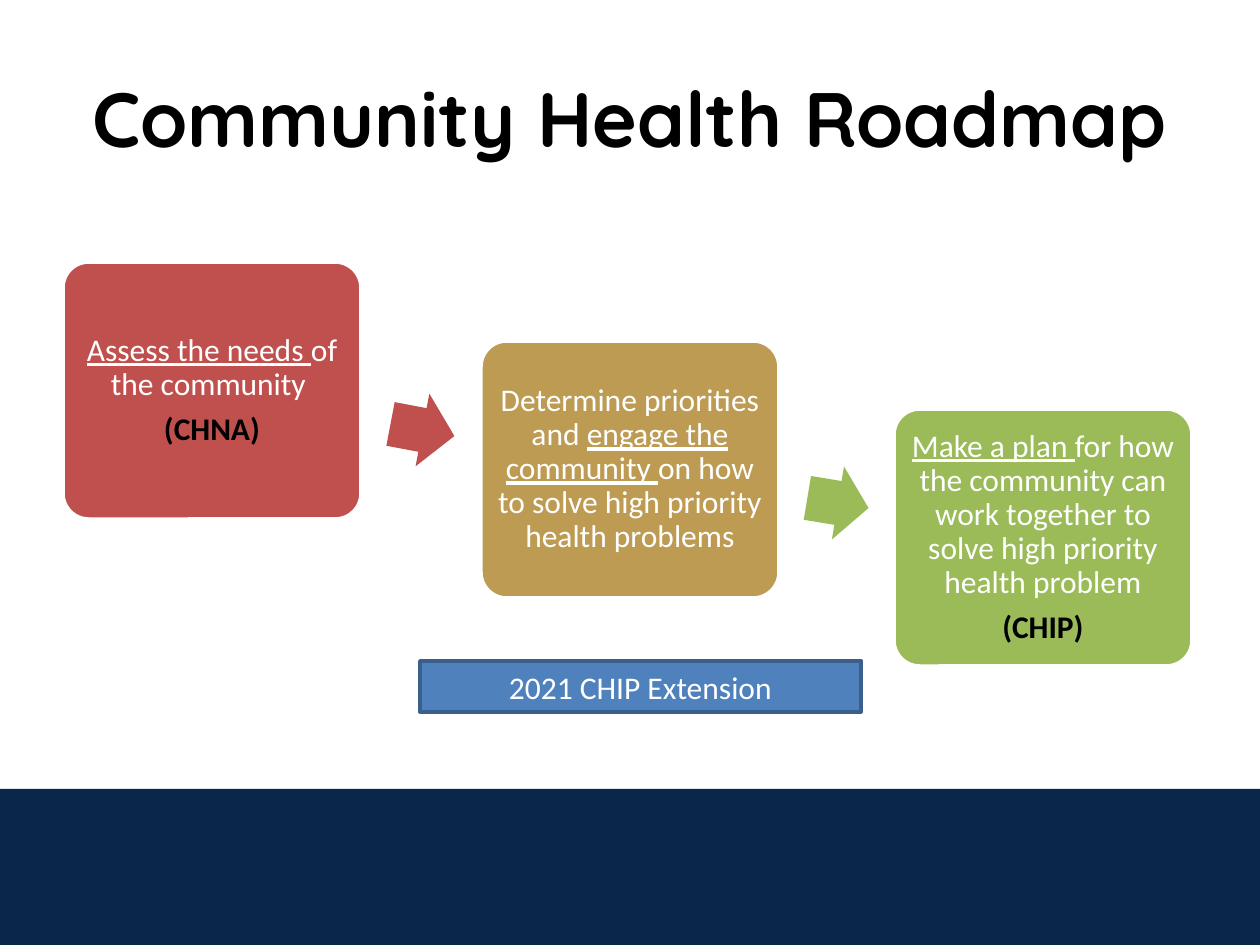
from pptx import Presentation
from pptx.dml.color import RGBColor
from pptx.enum.shapes import MSO_SHAPE
from pptx.enum.text import MSO_ANCHOR, PP_ALIGN
from pptx.util import Pt

RECTANGLE = MSO_SHAPE.RECTANGLE
ROUNDED = MSO_SHAPE.ROUNDED_RECTANGLE
ARROW = MSO_SHAPE.RIGHT_ARROW
MIDDLE = MSO_ANCHOR.MIDDLE
CENTER = PP_ALIGN.CENTER

PX_PER_INCH = 126
COLORS = {
    "white": "FFFFFF", "black": "000000", "navy": "0A2649", "red": "C0504D",
    "gold": "BD9B53", "green": "9BBB59", "blue": "4F81BD", "edge": "3A5F8C",
}

STEP_SIZE = (298, 257)
STEP_MARGIN = 9
STEPS = [
    ((63, 262), "red",
     [("Assess the needs ", True), ("of the community ", False)], "(CHNA)"),
    ((481, 341), "gold",
     [("Determine priorities and ", False), ("engage the community ", True),
      ("on how to solve high priority health problems", False)], None),
    ((894, 409), "green",
     [("Make a plan ", True),
      ("for how the community can work together to solve high priority health problem", False)],
     "(CHIP)"),
]
ARROWS = [((390, 393, 65, 74), 10.7, "red"), ((807, 466, 62, 74), 9.4, "green")]


def px(length):
    return round(length * 914400 / PX_PER_INCH)


def color(name):
    return RGBColor.from_string(COLORS[name])


def add_text(paragraph, text, font="Calibri", size=18, fill="white", bold=False, underline=False):
    paragraph.alignment = CENTER
    run = paragraph.add_run()
    run.text = text
    run.font.name = font
    run.font.size = Pt(size)
    run.font.color.rgb = color(fill)
    run.font.bold = bold
    run.font.underline = underline


def add_block(slide, kind, box, fill, edge=None):
    block = slide.shapes.add_shape(kind, *map(px, box))
    block.shadow.inherit = False
    block.fill.solid()
    block.fill.fore_color.rgb = color(fill)
    if edge:
        block.line.color.rgb = color(edge)
        block.line.width = Pt(2)
    else:
        block.line.fill.background()
    return block


def add_heading(slide, box, text):
    heading = slide.shapes.title
    heading.left, heading.top, heading.width, heading.height = map(px, box)
    heading.text_frame.vertical_anchor = MIDDLE
    add_text(heading.text_frame.paragraphs[0], text,
             font="Quicksand", size=44, fill="black", bold=True)


def add_step(slide, box, fill, phrases, report):
    step = add_block(slide, ROUNDED, box, fill, "white")
    step.adjustments[0] = 0.1
    frame = step.text_frame
    frame.word_wrap = True
    frame.vertical_anchor = MIDDLE
    frame.margin_left = frame.margin_right = px(STEP_MARGIN)
    frame.margin_top = frame.margin_bottom = px(STEP_MARGIN)
    for phrase, underline in phrases:
        add_text(frame.paragraphs[0], phrase, underline=underline)
    if report:
        add_text(frame.add_paragraph(), report, fill="black", bold=True)
    for paragraph in frame.paragraphs:
        paragraph.line_spacing = 0.9
        paragraph.space_after = Pt(6.3)


def add_step_arrow(slide, box, angle, fill):
    arrow = add_block(slide, ARROW, box, fill)
    arrow.adjustments[0] = 0.6
    arrow.adjustments[1] = 0.5
    arrow.rotation = angle


def add_roadmap(slide):
    for position, fill, phrases, report in STEPS:
        add_step(slide, position + STEP_SIZE, fill, phrases, report)
    for box, angle, fill in ARROWS:
        add_step_arrow(slide, box, angle, fill)


def add_extension(slide, box, text):
    extension = add_block(slide, RECTANGLE, box, "blue", "edge")
    extension.text_frame.word_wrap = True
    extension.text_frame.vertical_anchor = MIDDLE
    add_text(extension.text_frame.paragraphs[0], text)


def main():
    deck = Presentation()
    deck.slide_width, deck.slide_height = px(1260), px(945)
    slide = deck.slides.add_slide(deck.slide_layouts[5])
    add_block(slide, RECTANGLE, (0, 789, 1260, 156), "navy")
    add_heading(slide, (63, 38, 1134, 157), "Community Health Roadmap")
    add_roadmap(slide)
    add_extension(slide, (420, 661, 441, 51), "2021 CHIP Extension")
    deck.save("out.pptx")


if __name__ == "__main__":
    main()
